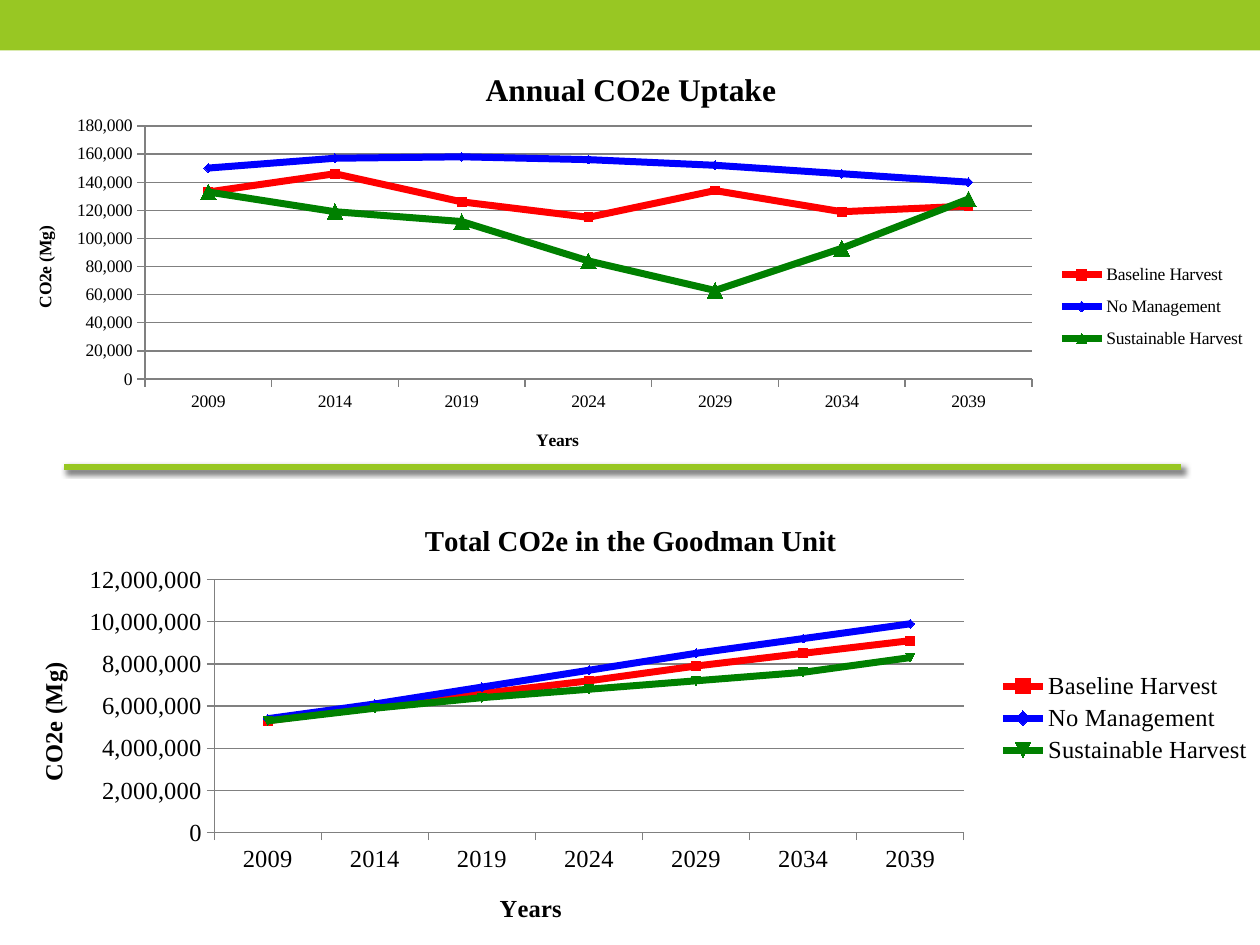
from lxml import etree
from pptx import Presentation
from pptx.chart.data import CategoryChartData
from pptx.dml.color import RGBColor
from pptx.enum.chart import XL_CHART_TYPE as ChartType, XL_LEGEND_POSITION as LegendPosition
from pptx.enum.chart import XL_MARKER_STYLE as Marker, XL_TICK_MARK as TickMark
from pptx.enum.shapes import MSO_CONNECTOR as Connector, MSO_SHAPE as Shape
from pptx.oxml import parse_xml
from pptx.oxml.ns import nsdecls, qn
from pptx.util import Inches, Pt

GREEN_BAND = RGBColor(0x98, 0xC7, 0x23)
BLACK = RGBColor(0, 0, 0)
GRID_GRAY = RGBColor(0x80, 0x80, 0x80)
SCENARIOS = {
    "Baseline Harvest": RGBColor(0xFF, 0, 0),
    "No Management": RGBColor(0, 0, 0xFF),
    "Sustainable Harvest": RGBColor(0, 0x80, 0),
}
YEARS = [str(year) for year in range(2009, 2040, 5)]
FONT = "Times New Roman"

UPTAKE = {
    "title": "Annual CO2e Uptake", "title_size": 18, "size": 10,
    "top": 180000, "step": 20000, "last_marker": (Marker.TRIANGLE, 9),
    "values": [
        [133000, 146000, 126000, 115000, 134000, 119000, 123000],
        [150000, 157000, 158000, 156000, 152000, 146000, 140000],
        [133000, 119000, 112000, 84000, 63000, 93000, 128000],
    ],
    "title_at": (3.81, 0.2), "years_at": (4.23, 3.07), "unit_at": (0.24, 1.46),
    "plot_at": (1.15, 0.69, 7.04, 2.01), "legend_at": (8.32, 1.7, 1.65, 0.85),
}
TOTAL = {
    "title": "Total CO2e in the Goodman Unit", "title_size": 16.5, "size": 14,
    "top": 12000000, "step": 2000000, "last_marker": (Marker.AUTOMATIC, 5),
    "values": [
        [5300000, 6000000, 6600000, 7200000, 7900000, 8500000, 9100000],
        [5400000, 6100000, 6900000, 7700000, 8500000, 9200000, 9900000],
        [5300000, 5900000, 6400000, 6800000, 7200000, 7600000, 8300000],
    ],
    "title_at": (3.33, 0.2), "years_at": (3.93, 3.15), "unit_at": (0.26, 1.32),
    "plot_at": (1.7, 0.7, 5.95, 2.01), "legend_at": (7.88, 1.4, 2.1, 0.8),
}


def add_layout(parent, index, place, box, inner=False):
    """Fix a chart part at a place given in inches within the chart box."""
    for old in parent.findall(qn("c:layout")):
        parent.remove(old)
    layout = parse_xml(f"<c:layout {nsdecls('c')}><c:manualLayout/></c:layout>")
    settings = [("layoutTarget", "inner")] if inner else []
    settings += [("xMode", "edge"), ("yMode", "edge")]
    sides = (box[2], box[3]) * 2
    settings += [(key, f"{Inches(length) / side:.4f}")
                 for key, length, side in zip("xywh", place, sides)]
    for key, value in settings:
        etree.SubElement(layout[0], qn(f"c:{key}")).set("val", value)
    parent.insert(index, layout)


def set_title(owner, title, wording, size, place, box):
    """Write a bold chart or axis title and place it."""
    owner.has_title = True
    title.text_frame.text = wording
    font = title.text_frame.paragraphs[0].runs[0].font
    font.name, font.size, font.bold = FONT, Pt(size), True
    font.color.rgb = BLACK
    add_layout(title._element, 1, place, box)


def style_axes(chart, spec, box):
    """Set scales, grid lines and titles of both axes."""
    years, amounts = chart.category_axis, chart.value_axis
    amounts.minimum_scale, amounts.maximum_scale = 0, spec["top"]
    amounts.major_unit = spec["step"]
    amounts.tick_labels.number_format = "#,##0"
    amounts.tick_labels.number_format_is_linked = False
    amounts.has_major_gridlines = True
    for part in (years, amounts, amounts.major_gridlines):
        part.format.line.color.rgb = GRID_GRAY
        part.format.line.width = Pt(0.75)
    for axis, wording, key in ((years, "Years", "years_at"), (amounts, "CO2e (Mg)", "unit_at")):
        axis.major_tick_mark = TickMark.OUTSIDE
        set_title(axis, axis.axis_title, wording, spec["size"], spec[key], box)


def style_series(chart, spec):
    """Colour each scenario line and its markers."""
    markers = [(Marker.AUTOMATIC, 5)] * 2 + [spec["last_marker"]]
    for series, color, (style, size) in zip(chart.plots[0].series, SCENARIOS.values(), markers):
        series.smooth = False
        series.format.line.color.rgb = color
        series.format.line.width = Pt(4)
        series.marker.style, series.marker.size = style, size
        series.marker.format.fill.solid()
        series.marker.format.fill.fore_color.rgb = color
        series.marker.format.line.color.rgb = color


def add_carbon_chart(slide, box, spec):
    """Add one titled scenario chart filling the box."""
    data = CategoryChartData(number_format="#,##0")
    data.categories = YEARS
    for scenario, values in zip(SCENARIOS, spec["values"]):
        data.add_series(scenario, values)
    chart = slide.shapes.add_chart(ChartType.LINE_MARKERS, *box, data).chart
    chart.font.name, chart.font.size = FONT, Pt(spec["size"])
    chart.font.color.rgb = BLACK
    chart.plots[0].vary_by_categories = False
    set_title(chart, chart.chart_title, spec["title"], spec["title_size"], spec["title_at"], box)
    style_axes(chart, spec, box)
    style_series(chart, spec)
    chart.has_legend = True
    chart.legend.position = LegendPosition.RIGHT
    chart.legend.include_in_layout = False
    add_layout(chart.legend._element, 1, spec["legend_at"], box)
    plot_area = chart._chartSpace.find(".//" + qn("c:plotArea"))
    add_layout(plot_area, 0, spec["plot_at"], box, inner=True)


def add_top_band(slide, box):
    """Add the green band across the top."""
    band = slide.shapes.add_shape(Shape.RECTANGLE, *box)
    band.shadow.inherit = False
    band.fill.solid()
    band.fill.fore_color.rgb = GREEN_BAND
    band.line.fill.background()


def add_divider(slide, left, right, y):
    """Add the shadowed green rule between the charts."""
    rule = slide.shapes.add_connector(Connector.STRAIGHT, left, y, right, y)
    rule.line.color.rgb = GREEN_BAND
    rule.line.width = Pt(3.5)
    rule._element.spPr.append(parse_xml(
        f'<a:effectLst {nsdecls("a")}><a:outerShdw blurRad="{Pt(3)}" dist="{Pt(2)}" '
        'dir="2700000" algn="tl" rotWithShape="0"><a:srgbClr val="000000">'
        '<a:alpha val="60000"/></a:srgbClr></a:outerShdw></a:effectLst>'))


def main():
    """Build the slide and save it."""
    deck = Presentation()
    deck.slide_width, deck.slide_height = Inches(10), Inches(7.5)
    slide = deck.slides.add_slide(deck.slide_layouts[6])
    width = deck.slide_width
    add_top_band(slide, (0, 0, width, Inches(0.4)))
    add_carbon_chart(slide, (0, Inches(0.31), width, Inches(3.59)), UPTAKE)
    add_carbon_chart(slide, (0, Inches(3.9), width, Inches(3.6)), TOTAL)
    add_divider(slide, Inches(0.51), Inches(9.37), Inches(3.71))
    deck.save("out.pptx")


if __name__ == "__main__":
    main()
